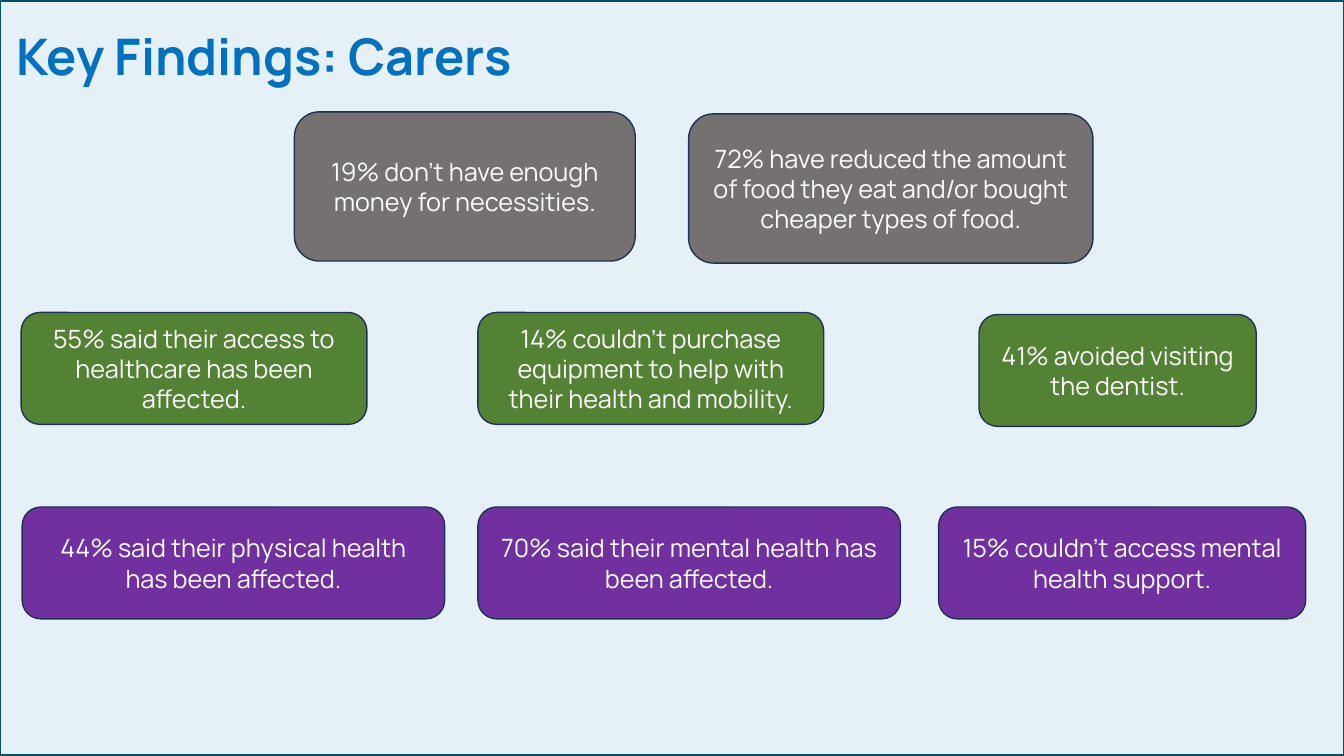
from pptx import Presentation
from pptx.dml.color import RGBColor
from pptx.enum.shapes import MSO_SHAPE
from pptx.enum.text import MSO_ANCHOR, PP_ALIGN
from pptx.util import Emu, Pt

SLIDE_WIDTH, SLIDE_HEIGHT = 1333, 750


def px(length):
    """100 px make one inch."""
    return Emu(length * 9144)


def color(hex_string):
    return RGBColor.from_string(hex_string)


class FindingsSlide:
    FONT = "Manrope"
    BACKGROUND = "E6F1F7"
    FRAME = "004F6B"
    TITLE = "0070C0"
    CARD_TEXT = "FFFFFF"
    CARD_OUTLINE = "1E3256"

    def __init__(self, presentation):
        self.slide = presentation.slides.add_slide(presentation.slide_layouts[6])
        background = self.slide.background.fill
        background.solid()
        background.fore_color.rgb = color(self.BACKGROUND)

    def shape(self, preset, left, top, width, height, outline, weight, fill=None):
        shape = self.slide.shapes.add_shape(
            preset, px(left), px(top), px(width), px(height))
        shape.shadow.inherit = False
        shape.line.color.rgb = color(outline)
        shape.line.width = Pt(weight)
        if fill:
            shape.fill.solid()
            shape.fill.fore_color.rgb = color(fill)
        else:
            shape.fill.background()
        return shape

    def add_text(self, frame, text, size, ink, bold=False):
        frame.word_wrap = True
        run = frame.paragraphs[0].add_run()
        run.text = text
        run.font.name = self.FONT
        run.font.size = Pt(size)
        run.font.bold = bold
        run.font.color.rgb = color(ink)

    def frame(self):
        self.shape(MSO_SHAPE.RECTANGLE, -1, 0, SLIDE_WIDTH + 2, SLIDE_HEIGHT,
                   self.FRAME, 3)

    def title(self, text, left, top, width, height):
        heading = self.slide.shapes.add_textbox(
            px(left), px(top), px(width), px(height)).text_frame
        heading.margin_left = heading.margin_right = px(16)
        heading.margin_top = heading.margin_bottom = px(12)
        self.add_text(heading, text, 36, self.TITLE, bold=True)

    def card(self, text, left, top, width, height, fill):
        card = self.shape(MSO_SHAPE.ROUNDED_RECTANGLE, left, top, width, height,
                          self.CARD_OUTLINE, 1, fill)
        finding = card.text_frame
        finding.vertical_anchor = MSO_ANCHOR.MIDDLE
        finding.paragraphs[0].alignment = PP_ALIGN.CENTER
        self.add_text(finding, text, 18, self.CARD_TEXT)


# Each theme: fill, card height, then (left, top, width, finding) per card
THEMES = [
    # Money and food
    ("767171", 148, [
        (292, 111, 338, "19% don’t have enough money for necessities."),
        (683, 113, 401, "72% have reduced the amount of food they eat "
                        "and/or bought cheaper types of food."),
    ]),
    # Healthcare access
    ("548235", 111, [
        (21, 310, 343, "55% said their access to healthcare has been affected."),
        (474, 310, 343, "14% couldn’t purchase equipment to help with "
                        "their health and mobility."),
        (971, 312, 275, "41% avoided visiting the dentist."),
    ]),
    # Physical and mental health
    ("7030A0", 111, [
        (22, 503, 419, "44% said their physical health has been affected."),
        (474, 503, 419, "70% said their mental health has been affected."),
        (931, 503, 364, "15% couldn’t access mental health support."),
    ]),
]


def main():
    presentation = Presentation()
    presentation.slide_width = px(SLIDE_WIDTH)
    presentation.slide_height = px(SLIDE_HEIGHT)

    # Frame and title
    carers = FindingsSlide(presentation)
    carers.frame()
    carers.title("Key Findings: Carers", 0, 13, 1161, 84)

    # Findings by theme
    for fill, height, findings in THEMES:
        for left, top, width, finding in findings:
            carers.card(finding, left, top, width, height, fill)

    presentation.save("out.pptx")


if __name__ == "__main__":
    main()
